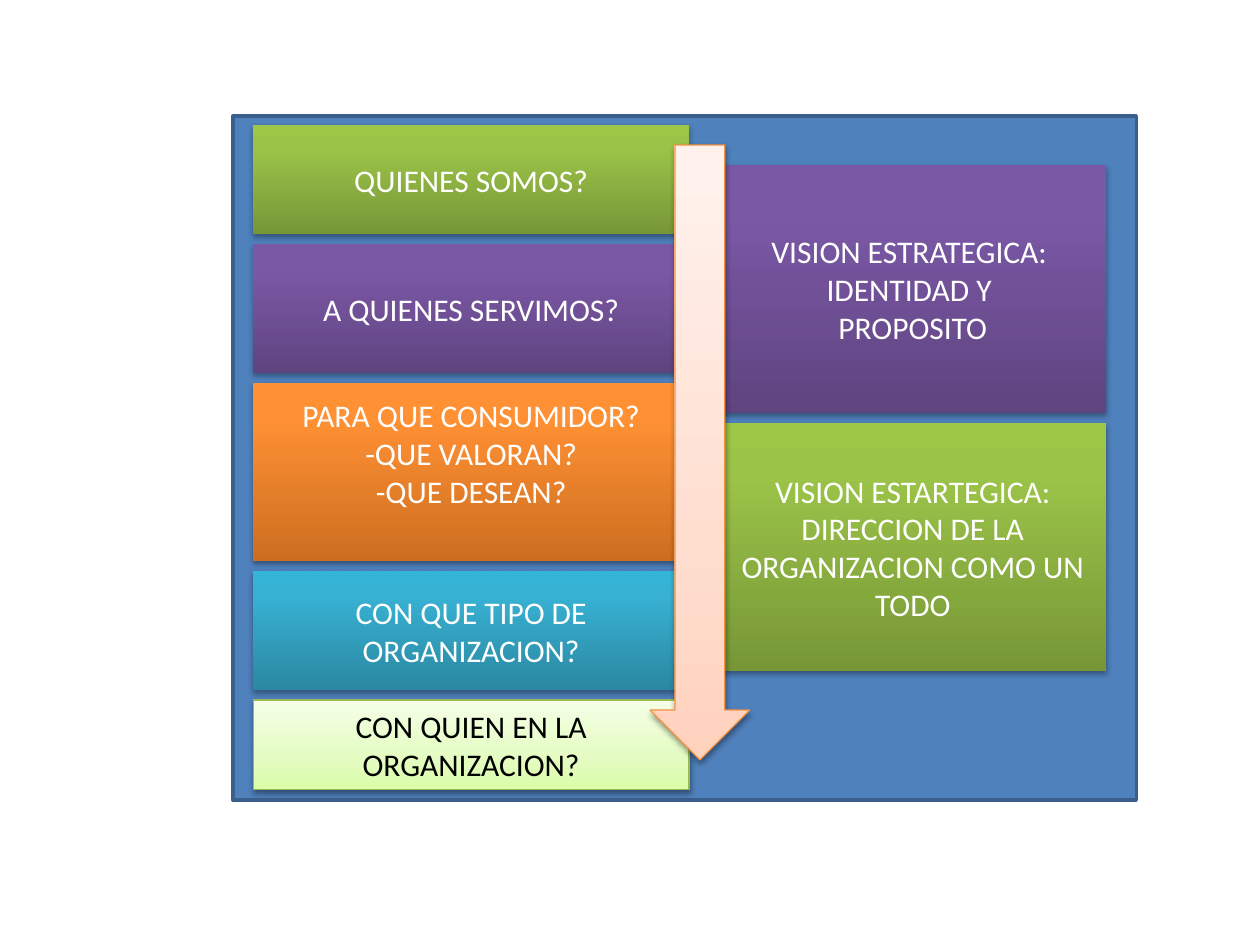
from copy import deepcopy

from pptx import Presentation
from pptx.dml.color import RGBColor
from pptx.enum.shapes import MSO_SHAPE
from pptx.enum.text import MSO_ANCHOR, PP_ALIGN
from pptx.oxml import parse_xml
from pptx.oxml.ns import nsdecls
from pptx.util import Pt

WHITE = RGBColor(0xFF, 0xFF, 0xFF)
BLACK = RGBColor(0x00, 0x00, 0x00)
BLUE = RGBColor(0x4F, 0x81, 0xBD)
NAVY = RGBColor(0x3A, 0x5F, 0x8C)
LEAF = RGBColor(0x98, 0xB9, 0x55)
AMBER = RGBColor(0xF6, 0x92, 0x40)

# Gradient colours, bottom to top
GREEN = [RGBColor(0x77, 0x97, 0x37), RGBColor(0x9B, 0xC3, 0x48), RGBColor(0x9D, 0xC7, 0x46)]
PURPLE = [RGBColor(0x5F, 0x44, 0x80), RGBColor(0x7B, 0x58, 0xA6), RGBColor(0x7C, 0x57, 0xA8)]
ORANGE = [RGBColor(0xCC, 0x6E, 0x20), RGBColor(0xFF, 0x90, 0x34), RGBColor(0xFF, 0x91, 0x36)]
TEAL = [RGBColor(0x2A, 0x88, 0xA2), RGBColor(0x37, 0xB1, 0xD2), RGBColor(0x34, 0xB4, 0xD6)]
LIME = [RGBColor(0xDA, 0xFD, 0xA7), RGBColor(0xE4, 0xFC, 0xC2), RGBColor(0xF5, 0xFF, 0xE7)]
PEACH = [RGBColor(0xFF, 0xD2, 0xBD), RGBColor(0xFF, 0xDE, 0xD0), RGBColor(0xFF, 0xF2, 0xED)]


def add_block(kind, left, top, width, height, tones, edge=None):
    """Add a shape with a vertical gradient and a soft shadow; edge makes it pale and outlined."""
    block = slide.shapes.add_shape(kind, Pt(left), Pt(top), Pt(width), Pt(height))
    fill = block.fill
    fill.gradient()
    fill.gradient_angle = 90
    stops = block._element.spPr.find(".//{*}gsLst")
    stops.insert(1, deepcopy(stops[0]))
    for stop, tone, place in zip(fill.gradient_stops, tones, (0, 0.35 if edge else 0.8, 1)):
        stop.color.rgb = tone
        stop.position = place
    if edge:
        block.line.color.rgb = edge
        block.line.width = Pt(0.75)
    else:
        block.line.fill.background()
    block.shadow.inherit = False
    dist, alpha = (20000, 38000) if edge else (23000, 35000)
    block._element.spPr.find("{*}effectLst").append(parse_xml(
        f'<a:outerShdw {nsdecls("a")} blurRad="40000" dist="{dist}" dir="5400000" rotWithShape="0">'
        f'<a:srgbClr val="000000"><a:alpha val="{alpha}"/></a:srgbClr></a:outerShdw>'))
    return block


def add_text(block, lines, color):
    frame = block.text_frame
    frame.word_wrap = True
    frame.vertical_anchor = MSO_ANCHOR.MIDDLE
    frame.text = "\n".join(lines)
    for para in frame.paragraphs:
        para.alignment = PP_ALIGN.CENTER
        para.font.size = Pt(18)
        para.font.name = "Calibri"
        para.font.color.rgb = color


deck = Presentation()
deck.slide_width, deck.slide_height = Pt(720), Pt(540)
slide = deck.slides.add_slide(deck.slide_layouts[6])

panel = slide.shapes.add_shape(MSO_SHAPE.RECTANGLE, Pt(133.2), Pt(66.2), Pt(516.2), Pt(391))
panel.fill.solid()
panel.fill.fore_color.rgb = BLUE
panel.line.color.rgb = NAVY
panel.line.width = Pt(2)
panel.shadow.inherit = False

GAP = 5.7
asks = [
    (62.4, GREEN, None, ["QUIENES SOMOS?"]),
    (73.6, PURPLE, None, ["A QUIENES SERVIMOS?"]),
    (102, ORANGE, None, ["PARA QUE CONSUMIDOR?", "-QUE VALORAN?", "-QUE DESEAN?"]),
    (67.8, TEAL, None, ["CON QUE TIPO DE ORGANIZACION?"]),
    (51.1, LIME, LEAF, ["CON QUIEN EN LA ORGANIZACION?"]),
]
top = 71.4
for height, tones, edge, lines in asks:
    block = add_block(MSO_SHAPE.RECTANGLE, 144.7, top, 249.1, height, tones, edge)
    add_text(block, lines, BLACK if edge else WHITE)
    if tones is ORANGE:
        block.text_frame.margin_bottom = Pt(25.6)
    top += height + GAP

goals = [
    (PURPLE, ["VISION ESTRATEGICA: ", "IDENTIDAD Y ", "PROPOSITO"]),
    (GREEN, ["VISION ESTARTEGICA: DIRECCION DE LA ORGANIZACION COMO UN TODO"]),
]
top = 94.3
for tones, lines in goals:
    block = add_block(MSO_SHAPE.RECTANGLE, 411.1, top, 221, 141.8, tones)
    add_text(block, lines, WHITE)
    top += 141.8 + GAP

add_block(MSO_SHAPE.DOWN_ARROW, 371.5, 82.8, 56.9, 351.4, PEACH, AMBER)

deck.save("out.pptx")
